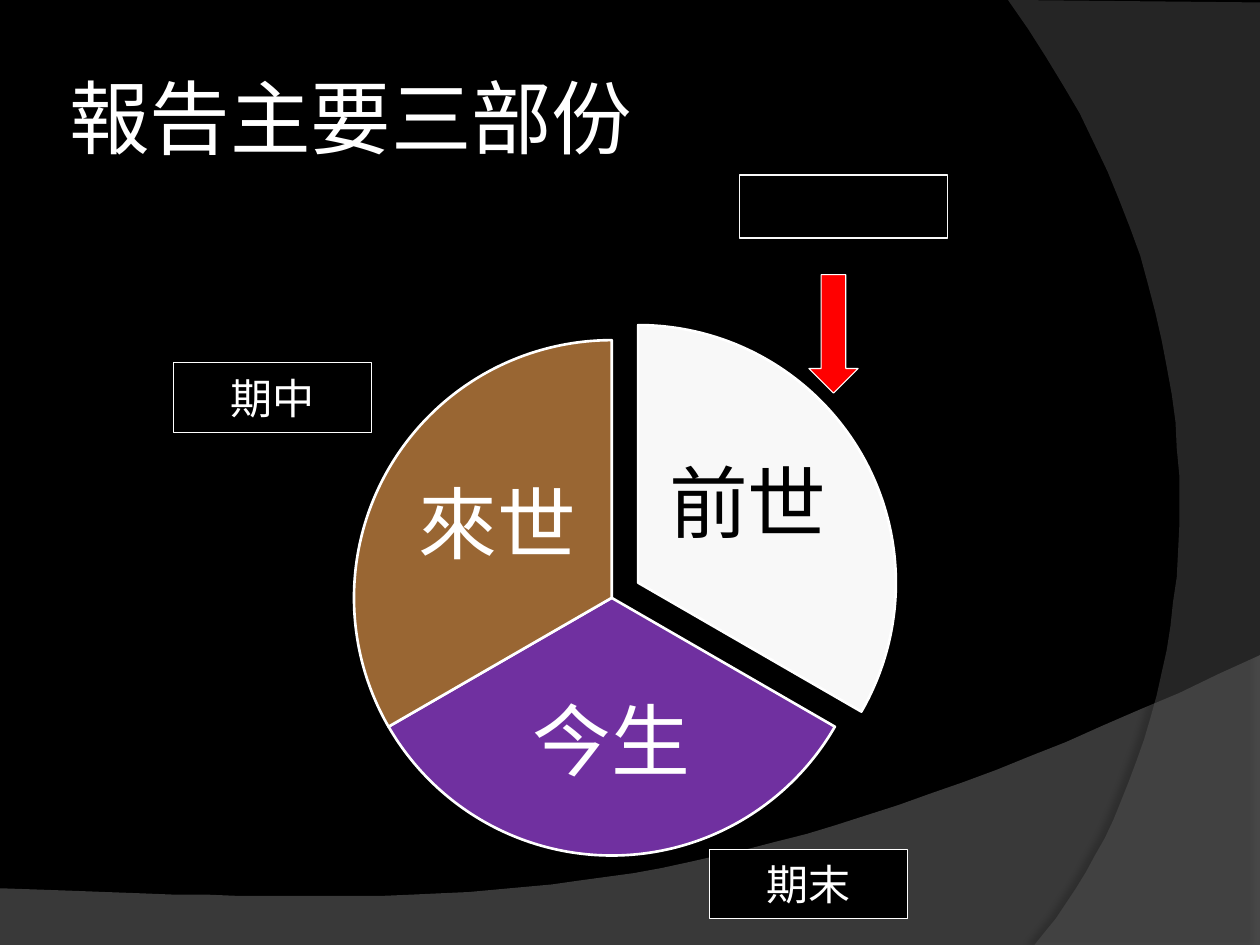
from typing import NamedTuple, Optional

from lxml import etree
from pptx import Presentation
from pptx.dml.color import RGBColor
from pptx.enum import shapes, text
from pptx.oxml.ns import qn
from pptx.util import Pt

PX = 9144  # EMU in one px, 100 px to the inch
WIDTH, HEIGHT = 1000, 750
CURVE_STEPS = 40

BLACK = RGBColor(0x00, 0x00, 0x00)
WHITE = RGBColor(0xFF, 0xFF, 0xFF)
OFF_WHITE = RGBColor(0xF8, 0xF8, 0xF8)
PURPLE = RGBColor(0x70, 0x30, 0xA0)
BROWN = RGBColor(0x99, 0x66, 0x33)
RED = RGBColor(0xFF, 0x00, 0x00)
GRAY = RGBColor(0x7F, 0x7F, 0x7F)
DARK_GRAY = RGBColor(0x5E, 0x5E, 0x5E)

Point = tuple[float, float]


class Box(NamedTuple):
    left: int
    top: int
    width: int
    height: int

    def emu(self) -> list[int]:
        return [side * PX for side in self]


class Swoosh(NamedTuple):
    """A translucent area whose edge is one curve, closed through the corners."""
    curve: tuple[Point, Point, Point, Point]
    corners: list[Point]
    fill: RGBColor
    opacity: int
    shadow_opacity: int
    shadow_distance: float
    shadow_angle: int


class Sector(NamedTuple):
    label: str
    circle: Box
    start: int  # degrees, clockwise from three o'clock
    end: int
    label_box: Box
    fill: RGBColor
    color: RGBColor


class Tag(NamedTuple):
    label: str
    box: Box
    fill: Optional[RGBColor]
    line: RGBColor
    line_width: float


CIRCLE = Box(281, 270, 409, 409)
PULLED_OUT = Box(302, 258, 409, 409)

SWOOSHES = [
    Swoosh(((1000, 520), (559, 729), (391, 719), (0, 705)),
           [(0, 750), (1000, 750)], GRAY, 45, 35, 3.5, 270),
    Swoosh(((821, 750), (935, 619), (1018, 300), (800, 0)),
           [(1000, 2), (1000, 750)], DARK_GRAY, 40, 45, 4, 180),
]
SECTORS = [
    Sector("前世", PULLED_OUT, 270, 30, Box(524, 334, 139, 136), OFF_WHITE, BLACK),
    Sector("今生", CIRCLE, 30, 150, Box(393, 528, 185, 127), PURPLE, WHITE),
    Sector("來世", CIRCLE, 150, 270, Box(325, 351, 139, 136), BROWN, WHITE),
]
TAGS = [
    Tag("", Box(587, 139, 165, 50), None, OFF_WHITE, 0.75),
    Tag("期中", Box(138, 288, 157, 55), BLACK, WHITE, 0.63),
    Tag("期末", Box(563, 674, 157, 55), BLACK, WHITE, 0.63),
]


def bezier(curve: tuple[Point, Point, Point, Point]) -> list[Point]:
    points = []
    for step in range(CURVE_STEPS + 1):
        t = step / CURVE_STEPS
        weights = ((1 - t) ** 3, 3 * t * (1 - t) ** 2, 3 * t * t * (1 - t), t ** 3)
        x, y = (sum(w * p[axis] for w, p in zip(weights, curve)) for axis in (0, 1))
        points.append((x, y))
    return points


def add_swoosh(slide, swoosh: Swoosh) -> None:
    first, *others = bezier(swoosh.curve) + swoosh.corners
    builder = slide.shapes.build_freeform(*first, scale=PX)
    builder.add_line_segments(others, close=True)
    area = builder.convert_to_shape()
    area.fill.solid()
    area.fill.fore_color.rgb = swoosh.fill
    area.line.fill.background()
    area.shadow.inherit = False

    properties = area.element.spPr
    fill_color = properties.find(qn("a:solidFill")).find(qn("a:srgbClr"))
    etree.SubElement(fill_color, qn("a:alpha"), val=str(swoosh.opacity * 1000))
    shadow = etree.SubElement(
        properties.find(qn("a:effectLst")), qn("a:outerShdw"),
        blurRad=str(Pt(4)), dist=str(Pt(swoosh.shadow_distance)),
        dir=str(swoosh.shadow_angle * 60000), rotWithShape="0")
    shadow_color = etree.SubElement(shadow, qn("a:srgbClr"), val=str(BLACK))
    etree.SubElement(shadow_color, qn("a:alpha"), val=str(swoosh.shadow_opacity * 1000))


def add_preset(slide, kind, box: Box, fill: Optional[RGBColor],
               line: RGBColor, line_width: float):
    preset = slide.shapes.add_shape(kind, *box.emu())
    preset.shadow.inherit = False
    if fill is None:
        preset.fill.background()
    else:
        preset.fill.solid()
        preset.fill.fore_color.rgb = fill
    preset.line.color.rgb = line
    preset.line.width = Pt(line_width)
    return preset


def write(frame, words: str, size: int, color: RGBColor,
          font: str = "Arial", align=text.PP_ALIGN.CENTER):
    frame.word_wrap = True
    frame.vertical_anchor = text.MSO_ANCHOR.MIDDLE
    paragraph = frame.paragraphs[0]
    paragraph.text = words
    paragraph.alignment = align
    paragraph.font.size = Pt(size)
    paragraph.font.name = font
    paragraph.font.color.rgb = color
    return paragraph


def add_text(slide, box: Box, inset: int, *args, **kwargs):
    frame = slide.shapes.add_textbox(*box.emu()).text_frame
    frame.margin_left = frame.margin_right = inset * PX
    frame.margin_top = frame.margin_bottom = inset * PX
    return write(frame, *args, **kwargs)


def add_sector(slide, sector: Sector) -> None:
    pie = add_preset(slide, shapes.MSO_SHAPE.PIE, sector.circle, sector.fill, WHITE, 1.5)
    for index, degrees in enumerate((sector.start, sector.end)):
        pie.adjustments[index] = degrees * 0.6  # 60000 units a degree, over 100000
    label = add_text(slide, sector.label_box, 6, sector.label, 45, sector.color)
    label.line_spacing = 0.9


def add_tag(slide, tag: Tag) -> None:
    rectangle = add_preset(slide, shapes.MSO_SHAPE.RECTANGLE, tag.box,
                           tag.fill, tag.line, tag.line_width)
    if tag.label:
        write(rectangle.text_frame, tag.label, 24, WHITE)


def main() -> None:
    deck = Presentation()
    deck.slide_width, deck.slide_height = WIDTH * PX, HEIGHT * PX
    slide = deck.slides.add_slide(deck.slide_layouts[6])
    slide.background.fill.solid()
    slide.background.fill.fore_color.rgb = BLACK

    for swoosh in SWOOSHES:
        add_swoosh(slide, swoosh)
    add_text(slide, Box(50, 30, 817, 125), 5, "報告主要三部份", 46, WHITE,
             font="Cabin", align=text.PP_ALIGN.LEFT)
    for sector in SECTORS:
        add_sector(slide, sector)
    add_preset(slide, shapes.MSO_SHAPE.DOWN_ARROW, Box(642, 218, 39, 94), RED, WHITE, 0.63)
    for tag in TAGS:
        add_tag(slide, tag)
    deck.save("out.pptx")


if __name__ == "__main__":
    main()
